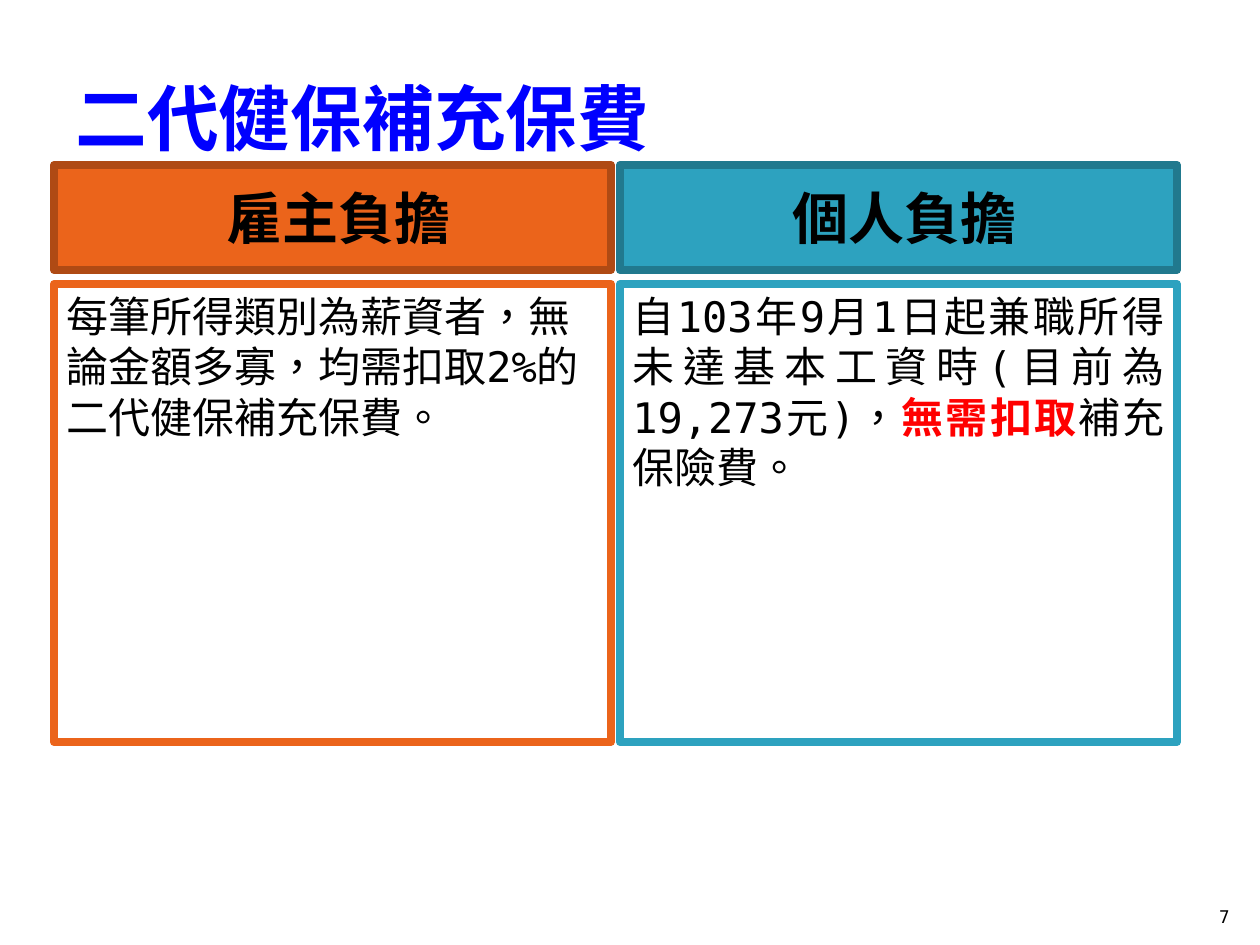
from dataclasses import dataclass

from pptx import Presentation
from pptx.dml.color import RGBColor
from pptx.enum.lang import MSO_LANGUAGE_ID
from pptx.enum.shapes import MSO_SHAPE
from pptx.enum.text import MSO_ANCHOR, PP_ALIGN
from pptx.shapes.base import BaseShape
from pptx.slide import Slide
from pptx.util import Emu, Pt

PIXELS_PER_INCH = 126
FONT = "DejaVu Sans Mono"
COLORS = {
    "title": "0000FF",
    "text": "000000",
    "emphasis": "FF0000",
    "panel": "FFFFFF",
    "orange": "EB641B",
    "orange_dark": "AF4A14",
    "teal": "2DA2BF",
    "teal_dark": "21798E",
}

COLUMN_LEFT, COLUMN_STEP, COLUMN_WIDTH = 54, 566, 557
HEADER_TOP, HEADER_HEIGHT = 165, 105
PANEL_TOP, PANEL_HEIGHT = 284, 458
BORDER_POINTS = 4.5


@dataclass(frozen=True)
class Box:
    left: int
    top: int
    width: int
    height: int


@dataclass(frozen=True)
class TextRun:
    text: str
    color: str = "text"
    bold: bool = False


@dataclass(frozen=True)
class Column:
    heading: str
    color: str
    body: tuple[TextRun, ...]
    alignment: PP_ALIGN


COLUMNS = (
    Column(
        "雇主負擔",
        "orange",
        (TextRun("每筆所得類別為薪資者，無論金額多寡，均需扣取2%的二代健保補充保費。"),),
        PP_ALIGN.LEFT,
    ),
    Column(
        "個人負擔",
        "teal",
        (
            TextRun("自103年9月1日起兼職所得未達基本工資時(目前為19,273元)，"),
            TextRun("無需扣取", "emphasis", True),
            TextRun("補充保險費。"),
        ),
        PP_ALIGN.JUSTIFY,
    ),
)


def px(value: int) -> Emu:
    return Emu(round(value * 914400 / PIXELS_PER_INCH))


def rgb(name: str) -> RGBColor:
    return RGBColor.from_string(COLORS[name])


def write_text(shape: BaseShape, runs: tuple[TextRun, ...], size: int,
               alignment: PP_ALIGN, anchor: MSO_ANCHOR) -> None:
    frame = shape.text_frame
    frame.word_wrap = True
    frame.vertical_anchor = anchor
    paragraph = frame.paragraphs[0]
    paragraph.alignment = alignment
    for item in runs:
        run = paragraph.add_run()
        run.text = item.text
        run.font.name = FONT
        run.font.size = Pt(size)
        run.font.bold = item.bold
        run.font.color.rgb = rgb(item.color)
        run.font.language_id = MSO_LANGUAGE_ID.TRADITIONAL_CHINESE


def add_label(slide: Slide, box: Box, run: TextRun, size: int,
              alignment: PP_ALIGN, anchor: MSO_ANCHOR) -> None:
    shape = slide.shapes.add_textbox(
        px(box.left), px(box.top), px(box.width), px(box.height))
    write_text(shape, (run,), size, alignment, anchor)


def add_bordered_box(slide: Slide, box: Box, fill: str, border: str) -> BaseShape:
    shape = slide.shapes.add_shape(
        MSO_SHAPE.RECTANGLE, px(box.left), px(box.top), px(box.width), px(box.height))
    shape.shadow.inherit = False
    shape.fill.solid()
    shape.fill.fore_color.rgb = rgb(fill)
    shape.line.color.rgb = rgb(border)
    shape.line.width = Pt(BORDER_POINTS)
    return shape


def add_column(slide: Slide, column: Column, left: int) -> None:
    header = add_bordered_box(
        slide, Box(left, HEADER_TOP, COLUMN_WIDTH, HEADER_HEIGHT),
        column.color, f"{column.color}_dark")
    header.text_frame.margin_left = px(25)
    write_text(header, (TextRun(column.heading, bold=True),), 32,
               PP_ALIGN.CENTER, MSO_ANCHOR.MIDDLE)

    panel = add_bordered_box(
        slide, Box(left, PANEL_TOP, COLUMN_WIDTH, PANEL_HEIGHT), "panel", column.color)
    write_text(panel, column.body, 24, column.alignment, MSO_ANCHOR.TOP)


def main() -> None:
    presentation = Presentation()
    presentation.slide_width = px(1260)
    presentation.slide_height = px(945)
    slide = presentation.slides.add_slide(presentation.slide_layouts[6])

    add_label(slide, Box(63, 38, 1134, 157), TextRun("二代健保補充保費", "title", True),
              41, PP_ALIGN.LEFT, MSO_ANCHOR.MIDDLE)
    for index, column in enumerate(COLUMNS):
        add_column(slide, column, COLUMN_LEFT + index * COLUMN_STEP)
    add_label(slide, Box(1192, 883, 50, 50), TextRun("7"),
              10, PP_ALIGN.RIGHT, MSO_ANCHOR.BOTTOM)

    presentation.save("out.pptx")


if __name__ == "__main__":
    main()
